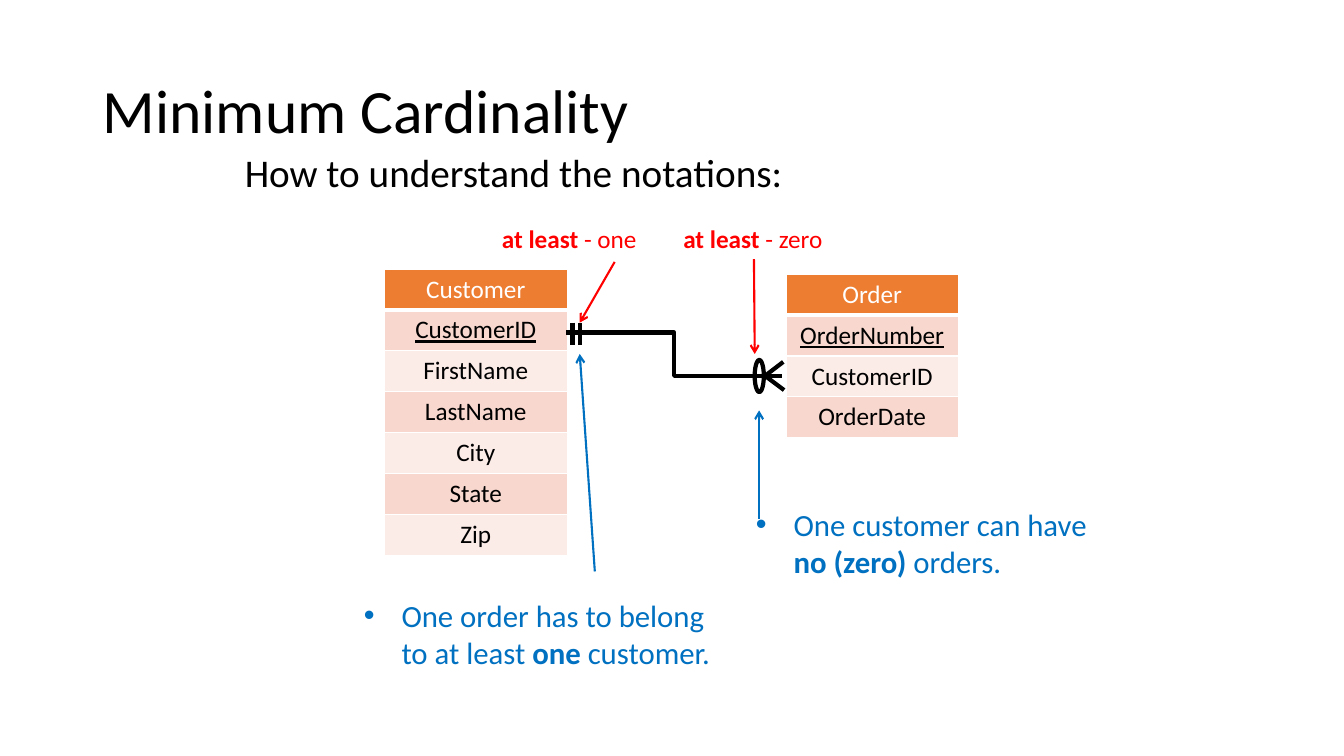
from lxml.etree import SubElement
from pptx import Presentation
from pptx.dml.color import RGBColor
from pptx.enum.shapes import MSO_CONNECTOR, MSO_SHAPE
from pptx.enum.text import MSO_ANCHOR, PP_ALIGN
from pptx.oxml.ns import qn
from pptx.util import Cm, Pt

BLACK, WHITE, RED, BLUE = "000000", "FFFFFF", "FF0000", "0070C0"
HEADER, BANDS = "ED7D31", ("FCECE8", "F8D7CE")
ROW_HEIGHT = 1.02


def rgb(color):
    return RGBColor.from_string(color)


def add_run(p, text, size, color, **formats):
    r = p.add_run()
    r.text = text
    r.font.color.rgb = rgb(color)
    formats = {"name": "Calibri", "size": Pt(size), "bold": False, **formats}
    for name, value in formats.items():
        setattr(r.font, name, value)


def add_text(s, box, runs, size, color=BLACK, wrap=False,
             anchor=MSO_ANCHOR.TOP, **formats):
    tf = s.shapes.add_textbox(*map(Cm, box)).text_frame
    tf.word_wrap = wrap
    tf.vertical_anchor = anchor
    p = tf.paragraphs[0]
    for name, value in formats.items():
        setattr(p, name, value)
    for text, bold in runs:
        add_run(p, text, size, color, bold=bold)
    return p


def add_bullet(s, box, runs):
    p = add_text(s, box, runs, 22, BLUE, wrap=True, level=1)
    pPr = p._p.get_or_add_pPr()
    pPr.set("marL", str(Cm(2.22)))
    pPr.set("indent", str(Cm(-0.95)))
    SubElement(pPr, qn("a:buFont"), typeface="Arial")
    SubElement(pPr, qn("a:buChar"), char="•")


def add_border(tcPr, side, width):
    ln = SubElement(tcPr, qn(f"a:{side}"), w=str(Pt(width)))
    fill = SubElement(ln, qn("a:solidFill"))
    SubElement(fill, qn("a:srgbClr"), val=WHITE)


def add_entity(s, left, top, width, names):
    height = ROW_HEIGHT * len(names)
    frame = s.shapes.add_table(len(names), 1, *map(Cm, (left, top, width, height)))
    for i, name in enumerate(names):
        frame.table.rows[i].height = Cm(ROW_HEIGHT)
        cell = frame.table.cell(i, 0)
        tcPr = cell._tc.get_or_add_tcPr()
        for side in ("lnL", "lnR", "lnT", "lnB"):
            add_border(tcPr, side, 3 if i == 0 and side == "lnB" else 1)
        cell.fill.solid()
        cell.fill.fore_color.rgb = rgb(BANDS[i % 2] if i else HEADER)
        p = cell.text_frame.paragraphs[0]
        p.alignment = PP_ALIGN.CENTER
        add_run(p, name, 18, BLACK if i else WHITE, underline=i == 1)


def add_line(s, start, end, color=BLACK, width=3, kind=MSO_CONNECTOR.STRAIGHT):
    line = s.shapes.add_connector(kind, *map(Cm, start + end))
    line.line.color.rgb = rgb(color)
    line.line.width = Pt(width)
    SubElement(line._element.spPr, qn("a:effectLst"))
    return line


def add_arrow(s, start, end, color):
    line = add_line(s, start, end, color, 1.5)
    SubElement(line.line._get_or_add_ln(), qn("a:tailEnd"), type="arrow")


def add_zero_mark(s, box):
    sp = s.shapes.add_shape(MSO_SHAPE.OVAL, *map(Cm, box))
    sp.shadow.inherit = False
    sp.fill.background()
    sp.line.color.rgb = rgb(BLACK)
    sp.line.width = Pt(3)


def main():
    prs = Presentation()
    prs.slide_width, prs.slide_height = Cm(33.87), Cm(19.05)
    s = prs.slides.add_slide(prs.slide_layouts[6])

    add_entity(s, 19.81, 6.91, 4.34,
               ["Order", "OrderNumber", "CustomerID", "OrderDate"])
    add_entity(s, 9.68, 6.78, 4.62,
               ["Customer", "CustomerID", "FirstName", "LastName",
                "City", "State", "Zip"])

    add_text(s, (2.34, 1.02, 29.21, 3.68), [("Minimum Cardinality", False)], 44,
             wrap=True, anchor=MSO_ANCHOR.MIDDLE, line_spacing=0.9)
    add_text(s, (5.92, 3.61, 14.22, 1.45),
             [("How to understand the notations:", False)], 28)
    for left, width, minimum in ((12.4, 3.94, "- one"), (16.97, 4.06, "- zero")):
        add_text(s, (left, 5.51, width, 1.02),
                 [("at least ", True), (minimum, False)], 18, RED,
                 space_before=Pt(6))

    add_line(s, (14.27, 8.38), (19.71, 9.47), kind=MSO_CONNECTOR.ELBOW)
    for toe in ((19.74, 9.12), (19.76, 9.83)):
        add_line(s, toe, (19.28, 9.47))
    for x in (14.43, 14.61):
        add_line(s, (x, 8.13), (x, 8.69))
    add_zero_mark(s, (19.02, 9.07, 0.23, 0.81))

    add_arrow(s, (15.49, 6.6), (14.61, 8.13), RED)
    add_arrow(s, (19, 6.53), (19.02, 8.92), RED)
    add_arrow(s, (19.13, 13.08), (19.13, 10.34), BLUE)
    add_arrow(s, (14.99, 14.4), (14.61, 8.92), BLUE)

    add_bullet(s, (7.65, 14.91, 10.77, 2.13),
               [("One order has to belong to at least ", False),
                ("one", True), (" customer.", False)])
    add_bullet(s, (17.53, 12.62, 10.74, 2.13),
               [("One customer can have ", False),
                ("no (zero)", True), (" orders.", False)])
    prs.save("out.pptx")


if __name__ == "__main__":
    main()
